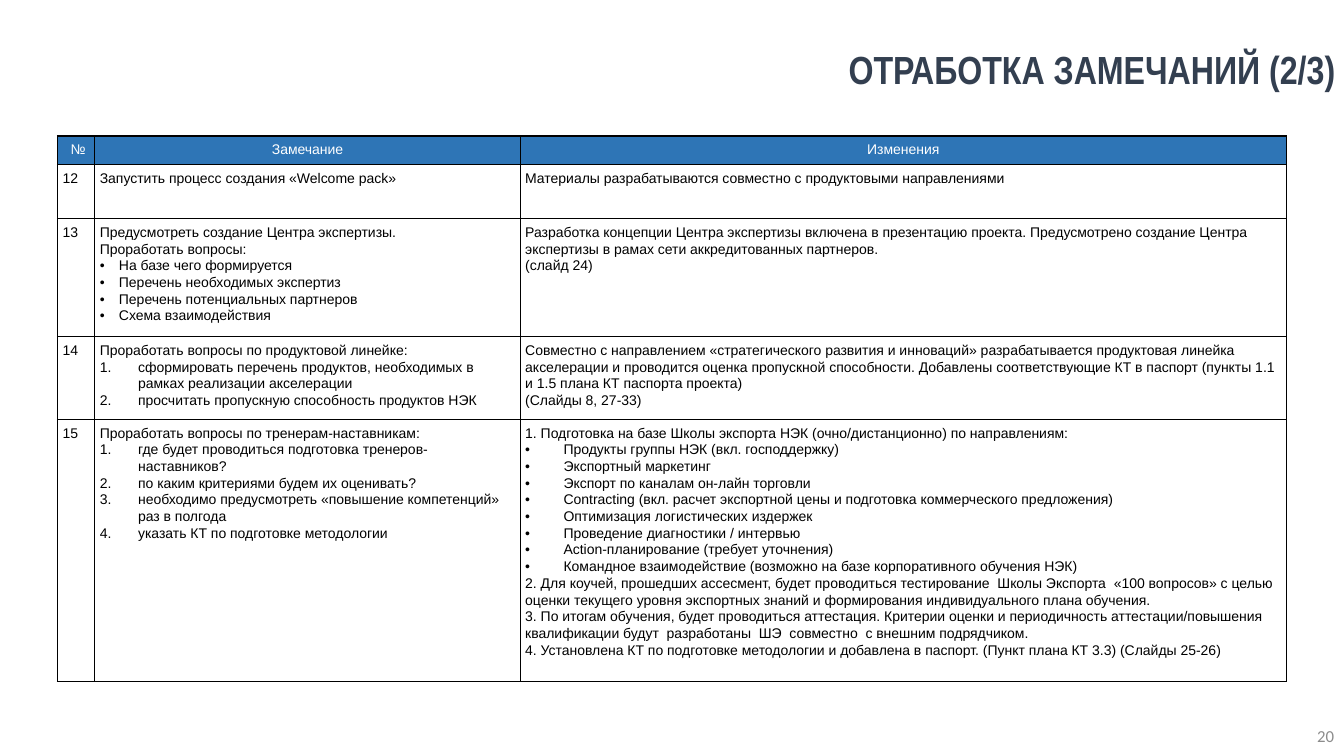
"""Build the slide that lists remarks 12-15 and the changes made in response."""
from lxml import etree
from pptx import Presentation
from pptx.dml.color import RGBColor
from pptx.enum.text import MSO_ANCHOR, PP_ALIGN
from pptx.oxml.ns import qn
from pptx.util import Inches, Pt

LEFT, CENTER, RIGHT = PP_ALIGN.LEFT, PP_ALIGN.CENTER, PP_ALIGN.RIGHT
TOP, MIDDLE = MSO_ANCHOR.TOP, MSO_ANCHOR.MIDDLE

THEME = {
    "title": ("Arial Narrow", 28, "333F50", True),
    "page": ("Calibri", 12, "8C8C8C", False),
    "header": ("Arial", 10, "FFFFFF", False),
    "body": ("Arial", 10, "000000", False),
    "header_fill": "2E75B6",
    "border": "000000",
}

PLAIN, TIGHT, BULLET, NUMBER = "plain", "tight", "bullet", "number"
INDENTS = {TIGHT: 0.19, BULLET: 0.38, NUMBER: 0.38}

HEADERS = [" №", "Замечание", "Изменения"]
COL_WIDTHS = [0.37, 4.22, 7.6]
ROW_HEIGHTS = [0.28, 0.54, 1.17, 0.82, 2.59]

REMARKS = [
    ("12",
     [(PLAIN, ["Запустить процесс создания «Welcome pack»"])],
     [(PLAIN, ["Материалы разрабатываются совместно с продуктовыми направлениями"])]),
    ("13",
     [(PLAIN, ["Предусмотреть создание Центра экспертизы.",
               "Проработать вопросы:"]),
      (TIGHT, ["На базе чего формируется",
               "Перечень необходимых экспертиз",
               "Перечень потенциальных партнеров",
               "Схема взаимодействия"])],
     [(PLAIN, ["Разработка концепции Центра экспертизы включена в презентацию проекта. "
               "Предусмотрено создание Центра экспертизы в рамах сети аккредитованных партнеров.",
               "(слайд 24)"])]),
    ("14",
     [(PLAIN, ["Проработать вопросы по продуктовой линейке:"]),
      (NUMBER, ["сформировать перечень продуктов, необходимых в рамках реализации акселерации",
                "просчитать пропускную способность продуктов НЭК"])],
     [(PLAIN, ["Совместно с направлением «стратегического развития и инноваций» разрабатывается "
               "продуктовая линейка акселерации и проводится оценка пропускной способности. "
               "Добавлены соответствующие КТ в паспорт (пункты 1.1 и 1.5 плана КТ паспорта проекта)",
               "(Слайды 8, 27-33)"])]),
    ("15",
     [(PLAIN, ["Проработать вопросы по тренерам-наставникам:"]),
      (NUMBER, ["где будет проводиться подготовка тренеров-наставников?",
                "по каким критериями будем их оценивать?",
                "необходимо предусмотреть «повышение компетенций» раз в полгода",
                "указать КТ по подготовке методологии"])],
     [(PLAIN, ["1. Подготовка на базе Школы экспорта НЭК (очно/дистанционно) по направлениям:"]),
      (BULLET, ["Продукты группы НЭК (вкл. господдержку)",
                "Экспортный маркетинг",
                "Экспорт по каналам он-лайн торговли",
                "Contracting (вкл. расчет экспортной цены и подготовка коммерческого предложения)",
                "Оптимизация логистических издержек",
                "Проведение диагностики / интервью",
                "Action-планирование (требует уточнения)",
                "Командное взаимодействие (возможно на базе корпоративного обучения НЭК)"]),
      (PLAIN, ["2. Для коучей, прошедших ассесмент, будет проводиться тестирование  Школы Экспорта  "
               "«100 вопросов» с целью оценки текущего уровня экспортных знаний и формирования "
               "индивидуального плана обучения.",
               "3. По итогам обучения, будет проводиться аттестация. Критерии оценки и периодичность "
               "аттестации/повышения квалификации будут  разработаны  ШЭ  совместно  с внешним "
               "подрядчиком.",
               "4. Установлена КТ по подготовке методологии и добавлена в паспорт. "
               "(Пункт плана КТ 3.3) (Слайды 25-26)"])]),
]


def write(tf, groups, style, align, spacing):
    """Fill a text frame with groups of plain, bulleted or numbered paragraphs."""
    font, size, color, bold = THEME[style]
    lines = [(kind, text) for kind, texts in groups for text in texts]
    for i, (kind, text) in enumerate(lines):
        p = tf.add_paragraph() if i else tf.paragraphs[0]
        p.alignment = align
        p.line_spacing = spacing
        if kind in INDENTS:
            pPr = p._p.get_or_add_pPr()
            indent = Inches(INDENTS[kind])
            pPr.set("marL", str(indent))
            pPr.set("indent", str(-indent))
            if kind == NUMBER:
                etree.SubElement(pPr, qn("a:buFont"), typeface="+mj-lt")
                etree.SubElement(pPr, qn("a:buAutoNum"), type="arabicPeriod")
            else:
                etree.SubElement(pPr, qn("a:buFont"), typeface="Arial")
                etree.SubElement(pPr, qn("a:buChar"), char="•")
        r = p.add_run()
        r.text = text
        r.font.name, r.font.size, r.font.bold = font, Pt(size), bold
        r.font.color.rgb = RGBColor.from_string(color)


def add_borders(cell):
    """Draw a thin line on all four sides of a table cell."""
    tcPr = cell._tc.get_or_add_tcPr()
    for side in ("lnL", "lnR", "lnT", "lnB"):
        ln = etree.SubElement(tcPr, qn(f"a:{side}"), w=str(Pt(1)))
        fill = etree.SubElement(ln, qn("a:solidFill"))
        etree.SubElement(fill, qn("a:srgbClr"), val=THEME["border"])


prs = Presentation()
prs.slide_width, prs.slide_height = Inches(13.33), Inches(7.5)
s = prs.slides.add_slide(prs.slide_layouts[6])

for text, style, box, anchor, spacing in [
    ("ОТРАБОТКА ЗАМЕЧАНИЙ (2/3)", "title", (3.52, 0.45, 9.82, 0.95), TOP, 0.9),
    ("20", "page", (10.33, 7.1, 3, 0.4), MIDDLE, 1.0),
]:
    tf = s.shapes.add_textbox(*[Inches(v) for v in box]).text_frame
    tf.word_wrap = True
    tf.vertical_anchor = anchor
    write(tf, [(PLAIN, [text])], style, RIGHT, spacing)

table = s.shapes.add_table(
    len(ROW_HEIGHTS), len(COL_WIDTHS), Inches(0.57), Inches(1.35),
    Inches(sum(COL_WIDTHS)), Inches(sum(ROW_HEIGHTS))).table
table.first_row = table.horz_banding = False
for column, width in zip(table.columns, COL_WIDTHS):
    column.width = Inches(width)
for row, height in zip(table.rows, ROW_HEIGHTS):
    row.height = Inches(height)

rows = [[[(PLAIN, [title])] for title in HEADERS]]
rows += [[[(PLAIN, [number])], remark, change] for number, remark, change in REMARKS]
for i, row in enumerate(rows):
    for j, groups in enumerate(row):
        cell = table.cell(i, j)
        cell.margin_left = cell.margin_right = Inches(0.05)
        cell.margin_top = cell.margin_bottom = Inches(0.05)
        add_borders(cell)
        if i == 0:
            cell.fill.solid()
            cell.fill.fore_color.rgb = RGBColor.from_string(THEME["header_fill"])
            write(cell.text_frame, groups, "header", CENTER, 1.07)
        else:
            cell.fill.background()
            write(cell.text_frame, groups, "body", LEFT, 1.07)

prs.save("out.pptx")
